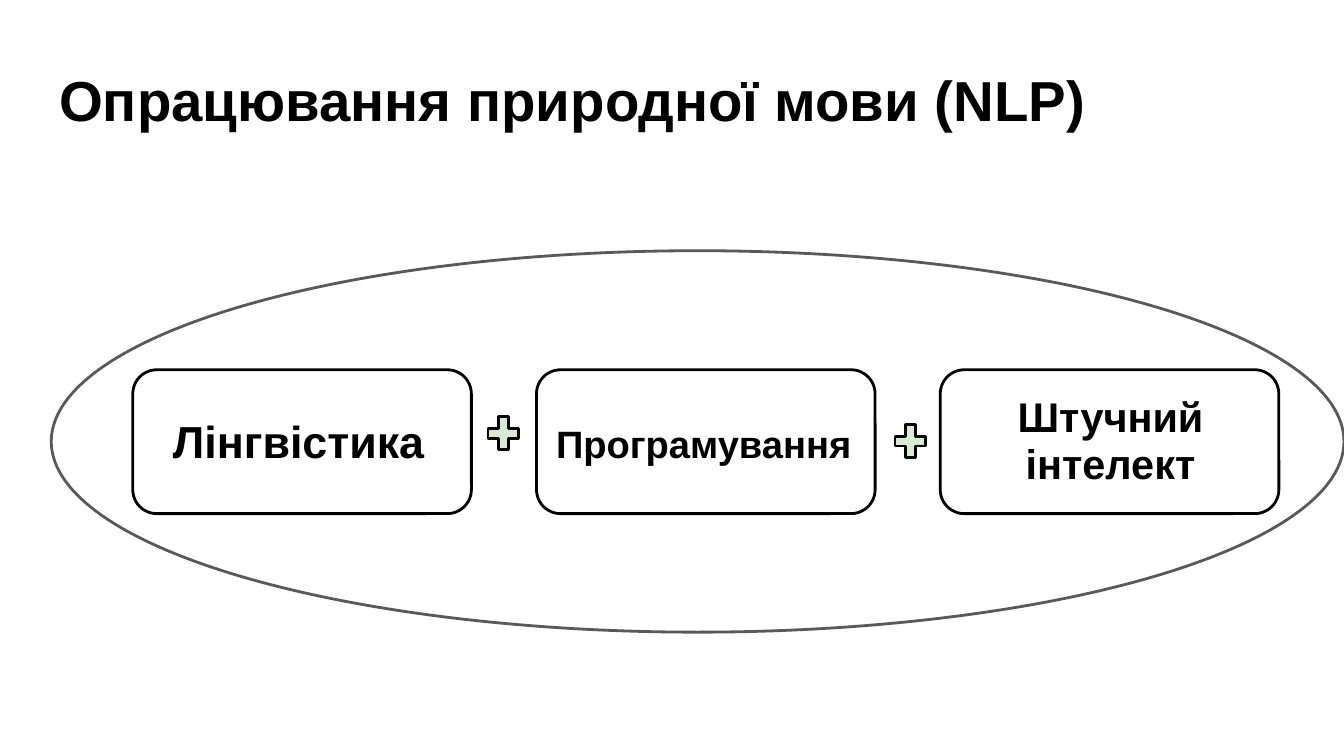
"""Build a slide on the parts of natural language processing."""
import pptx
import pptx.dml.color
import pptx.enum.shapes
import pptx.enum.text
import pptx.util

Cm = pptx.util.Cm
Pt = pptx.util.Pt
Kind = pptx.enum.shapes.MSO_SHAPE
Align = pptx.enum.text.PP_ALIGN

FONT = "Arial"
BLACK = "000000"
GREY = "595959"
GREEN = "D9EAD3"


def color(code):
    """Turn a hex string into a colour."""
    return pptx.dml.color.RGBColor.from_string(code)


def add_form(slide, kind, box, line, fill=None, ratio=None):
    """Add an outlined shape, filled if a fill is given."""
    form = slide.shapes.add_shape(kind, *map(Cm, box))
    form.shadow.inherit = False
    form.line.color.rgb = color(line)
    form.line.width = Pt(1.5)
    if fill:
        form.fill.solid()
        form.fill.fore_color.rgb = color(fill)
    else:
        form.fill.background()
    if ratio:
        form.adjustments[0] = ratio


def add_label(slide, box, text, size, align=Align.LEFT, lead=1.0, after=0):
    """Add a bold text box."""
    frame = slide.shapes.add_textbox(*map(Cm, box)).text_frame
    frame.word_wrap = True
    frame.vertical_anchor = pptx.enum.text.MSO_ANCHOR.TOP
    frame.margin_left = frame.margin_right = Cm(0.25)
    frame.margin_top = frame.margin_bottom = Cm(0.25)
    para = frame.paragraphs[0]
    para.alignment = align
    para.line_spacing = lead
    para.space_after = Pt(after)
    run = para.add_run()
    run.text = text
    run.font.name = FONT
    run.font.size = Pt(size)
    run.font.bold = True
    run.font.color.rgb = color(BLACK)


def main():
    """Build and save the slide."""
    deck = pptx.Presentation()
    deck.slide_width, deck.slide_height = Cm(25.4), Cm(14.29)
    slide = deck.slides.add_slide(deck.slide_layouts[6])
    add_label(slide, (0.87, 0.98, 23.67, 1.6),
              "Опрацювання природної мови (NLP)", 30.2)
    add_form(slide, Kind.OVAL, (0.97, 4.74, 24.43, 7.21), GREY)

    fields = [
        ("Лінгвістика", (3.02, 7.64, 5.36, 1.47), 24, Align.LEFT, 0.95),
        ("Програмування", (10.26, 7.57, 6.4, 1.63), 20.4, Align.LEFT, 1.15),
        ("Штучний інтелект", (18.31, 7.21, 5.36, 2.34), 22.2, Align.CENTER, 0.95),
    ]
    for place, (text, box, size, align, lead) in enumerate(fields):
        add_form(slide, Kind.ROUNDED_RECTANGLE,
                 (2.51 + 7.63 * place, 6.99, 6.4, 2.72), BLACK, ratio=0.167)
        add_label(slide, box, text, size, align, lead, 12)

    for left, top in [(9.12, 7.77), (16.81, 7.92)]:
        add_form(slide, Kind.MATH_PLUS, (left, top, 0.79, 0.84),
                 BLACK, GREEN, 0.235)
    deck.save("out.pptx")


if __name__ == "__main__":
    main()
